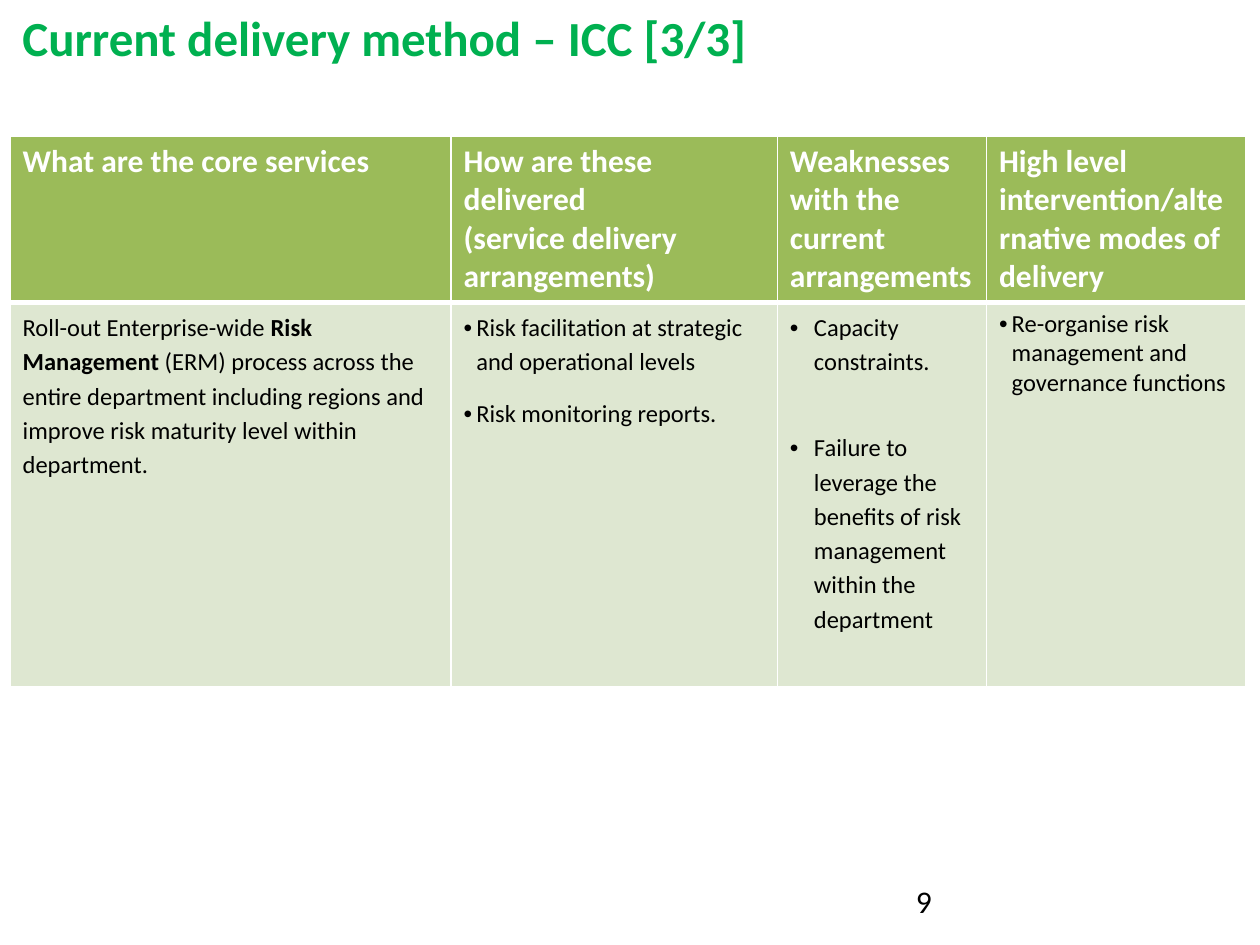
from lxml.etree import SubElement
from pptx import Presentation
from pptx.dml.color import RGBColor
from pptx.oxml.ns import qn
from pptx.util import Inches, Pt

WHITE = RGBColor(0xFF, 0xFF, 0xFF)
BLACK = RGBColor(0, 0, 0)
TITLE_GREEN = RGBColor(0x00, 0xB0, 0x50)
HEADER_GREEN = RGBColor(0x9B, 0xBB, 0x59)
BODY_GREEN = RGBColor(0xDE, 0xE7, 0xD1)

TITLE = "Current delivery method – ICC [3/3]"
PAGE_NUMBER = "9"
COLUMN_WIDTHS = [3.5, 2.59, 1.66, 2.06]
ROW_HEIGHTS = [1.31, 3.05]

HEADERS = [
    ["What are the core services"],
    ["How are these delivered", "(service delivery arrangements)"],
    ["Weaknesses with the current arrangements"],
    ["High level intervention/alternative modes of delivery"],
]
CORE_SERVICE = [
    ("Roll-out Enterprise-wide ", False),
    ("Risk Management", True),
    (" (ERM) process across the entire department including regions "
     "and improve risk maturity level within department.", False),
]
DELIVERY = [
    "Risk facilitation at strategic and operational levels",
    "Risk monitoring reports.",
]
WEAKNESSES = [
    "Capacity constraints.",
    "Failure to leverage the benefits of risk management within the department",
]
INTERVENTIONS = ["Re-organise risk management and governance functions"]

TITLE_FONT = {"name": "Calibri", "size": Pt(28), "bold": True}
HEADER_FONT = {"name": "Calibri", "size": Pt(18), "bold": True}
BODY_FONT = {"name": "Calibri", "size": Pt(14), "bold": False}
NUMBER_FONT = {"name": "Calibri", "size": Pt(18), "bold": False}
PLAIN = {}
SPACED = {"line_spacing": 1.15, "space_after": Pt(10)}
WIDE_GAP = {"line_spacing": 1.15, "space_after": Pt(29.5)}

BODY = [
    [(CORE_SERVICE, SPACED, None)],
    [(text, SPACED, 0.1) for text in DELIVERY],
    [(text, spacing, 0.19) for text, spacing in zip(WEAKNESSES, [WIDE_GAP, SPACED])],
    [(text, PLAIN, 0.1) for text in INTERVENTIONS],
]


def apply(target, values):
    for name, value in values.items():
        setattr(target, name, value)


def add_bullet(paragraph, indent):
    properties = paragraph._p.get_or_add_pPr()
    properties.set("marL", str(Inches(indent)))
    properties.set("indent", str(-Inches(indent)))
    SubElement(properties, qn("a:buFont")).set("typeface", "Arial")
    SubElement(properties, qn("a:buChar")).set("char", "•")


def write(frame, paragraphs, font, color):
    for index, (content, spacing, indent) in enumerate(paragraphs):
        paragraph = frame.add_paragraph() if index else frame.paragraphs[0]
        if indent:
            add_bullet(paragraph, indent)
        apply(paragraph, spacing)
        spans = [(content, font["bold"])] if isinstance(content, str) else content
        for text, bold in spans:
            run = paragraph.add_run()
            run.text = text
            apply(run.font, {**font, "bold": bold})
            run.font.color.rgb = color


def add_borders(cell, bottom_width):
    properties = cell._tc.get_or_add_tcPr()
    for side, width in [("L", 1), ("R", 1), ("T", 1), ("B", bottom_width)]:
        line = SubElement(properties, qn(f"a:ln{side}"), w=str(Pt(width)))
        fill = SubElement(line, qn("a:solidFill"))
        SubElement(fill, qn("a:srgbClr")).set("val", str(WHITE))


def add_label(slide, box, text, font, color):
    frame = slide.shapes.add_textbox(*map(Inches, box)).text_frame
    frame.word_wrap = True
    write(frame, [(text, PLAIN, None)], font, color)


def add_services_table(slide):
    table = slide.shapes.add_table(
        len(ROW_HEIGHTS), len(COLUMN_WIDTHS), Inches(0.08), Inches(1.08),
        Inches(sum(COLUMN_WIDTHS)), Inches(sum(ROW_HEIGHTS))).table
    for column, width in zip(table.columns, COLUMN_WIDTHS):
        column.width = Inches(width)
    for row, height in zip(table.rows, ROW_HEIGHTS):
        row.height = Inches(height)
    header = [[(text, PLAIN, None) for text in lines] for lines in HEADERS]
    styles = [
        (header, HEADER_FONT, WHITE, HEADER_GREEN, 3),
        (BODY, BODY_FONT, BLACK, BODY_GREEN, 1),
    ]
    for row, (contents, font, color, background, bottom) in zip(table.rows, styles):
        for cell, paragraphs in zip(row.cells, contents):
            add_borders(cell, bottom)
            cell.fill.solid()
            cell.fill.fore_color.rgb = background
            write(cell.text_frame, paragraphs, font, color)
    for cell in table.rows[1].cells:
        top = cell._tc.tcPr.find(qn("a:lnT"))
        top.set("w", str(Pt(3)))


def main():
    deck = Presentation()
    apply(deck, {"slide_width": Inches(10), "slide_height": Inches(7.5)})
    slide = deck.slides.add_slide(deck.slide_layouts[6])
    add_services_table(slide)
    add_label(slide, (0.08, 0.01, 9, 0.57), TITLE, TITLE_FONT, TITLE_GREEN)
    add_label(slide, (7.17, 6.95, 2.33, 0.4), PAGE_NUMBER, NUMBER_FONT, BLACK)
    deck.save("out.pptx")


if __name__ == "__main__":
    main()
